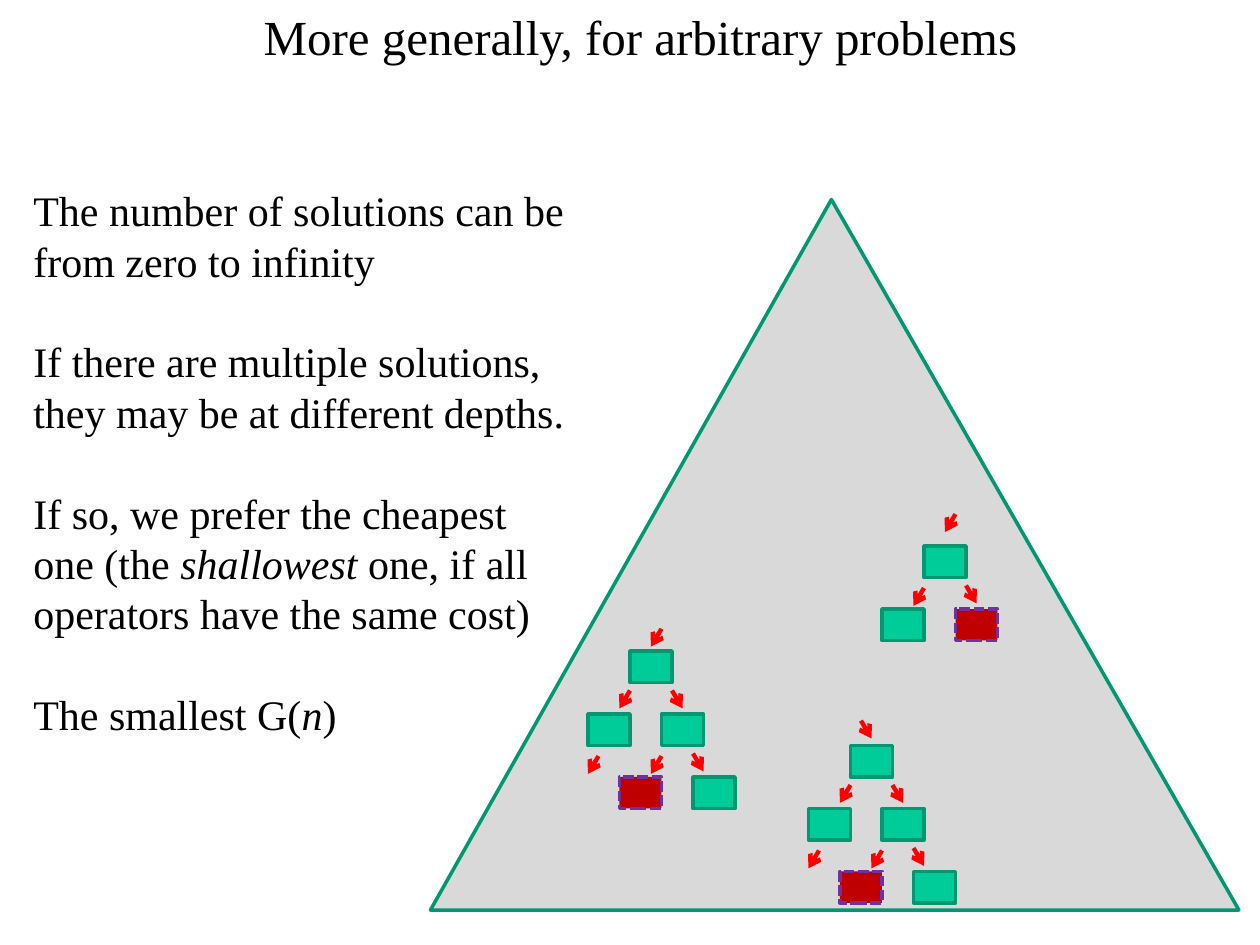
"""Build a slide on search trees whose solutions lie at different depths."""
from dataclasses import dataclass

from lxml import etree
from pptx import Presentation
from pptx.dml.color import RGBColor
from pptx.enum.dml import MSO_LINE
from pptx.enum.shapes import MSO_CONNECTOR, MSO_SHAPE
from pptx.enum.text import MSO_ANCHOR, MSO_AUTO_SIZE, PP_ALIGN
from pptx.oxml.ns import qn
from pptx.slide import Slide
from pptx.util import Pt

RECT, CONE = MSO_SHAPE.RECTANGLE, MSO_SHAPE.ISOSCELES_TRIANGLE
STRAIGHT, DASH = MSO_CONNECTOR.STRAIGHT, MSO_LINE.SQUARE_DOT
LEFT, CENTER = PP_ALIGN.LEFT, PP_ALIGN.CENTER
TOP, FIXED = MSO_ANCHOR.TOP, MSO_AUTO_SIZE.NONE

NOTES = [
    "The number of solutions can be from zero to infinity",
    "If there are multiple solutions, they may be at different depths.",
    "If so, we prefer the cheapest one (the *shallowest* one, if all operators have the same cost)",
    "The smallest G(*n*)",
]


@dataclass(frozen=True)
class Theme:
    """Colours, font and sizes of the slide."""
    font: str = "Times New Roman"
    head: int = 28
    body: int = 24
    ink: str = "000000"
    space: str = "D9D9D9"
    node: str = "00CC99"
    edge: str = "009771"
    goal: str = "C00000"
    rim: str = "7030A0"
    step: str = "FF0000"
    rule: float = 2
    stroke: float = 2.5


def put(frame, lines, *, font, size, color, align=LEFT, gap=0):
    """Fill a text frame, with italics between asterisks."""
    frame.word_wrap = True
    frame.auto_size = FIXED
    frame.vertical_anchor = TOP
    for i, line in enumerate(lines):
        para = frame.add_paragraph() if i else frame.paragraphs[0]
        para.alignment = align
        para.line_spacing = Pt(1.2 * size)
        para.space_after = Pt(gap)
        for j, part in enumerate(line.split("*")):
            run = para.add_run()
            run.text = part
            run.font.name = font
            run.font.size = Pt(size)
            run.font.italic = j % 2 == 1
            run.font.color.rgb = RGBColor.from_string(color)


@dataclass
class Board:
    """Draws each kind of element on the slide in one style."""
    slide: Slide
    theme: Theme

    def title(self, text, x, y, w, h):
        """Place and format the title."""
        t, head = self.theme, self.slide.shapes.title
        head.left, head.top, head.width, head.height = map(Pt, (x, y, w, h))
        put(head.text_frame, [text], font=t.font, size=t.head, color=t.ink, align=CENTER)

    def text(self, lines, x, y, w, h):
        """Add a text box with a blank line's gap between paragraphs."""
        t = self.theme
        box = self.slide.shapes.add_textbox(*map(Pt, (x, y, w, h)))
        put(box.text_frame, lines, font=t.font, size=t.body, color=t.ink, gap=1.2 * t.body)

    def shape(self, kind, x, y, w, h, fill, line):
        """Add a filled and outlined shape."""
        item = self.slide.shapes.add_shape(kind, *map(Pt, (x, y, w, h)))
        item.shadow.inherit = False
        item.fill.solid()
        item.fill.fore_color.rgb = RGBColor.from_string(fill)
        item.line.color.rgb = RGBColor.from_string(line)
        item.line.width = Pt(self.theme.rule)
        return item

    def node(self, x, y, goal=False):
        """Add a search node, dashed and red when it is a goal."""
        t = self.theme
        colors = (t.goal, t.rim) if goal else (t.node, t.edge)
        box = self.shape(RECT, x, y, 24, 18, *colors)
        if goal:
            box.line.dash_style = DASH

    def arrow(self, x, y, way):
        """Add a short arrow down to the left (-1) or right (1)."""
        ends = map(Pt, (x, y, x + 6 * way, y + 10.2))
        link = self.slide.shapes.add_connector(STRAIGHT, *ends)
        link.line.color.rgb = RGBColor.from_string(self.theme.step)
        link.line.width = Pt(self.theme.stroke)
        line = link.line._get_or_add_ln()
        etree.SubElement(line, qn("a:tailEnd"), type="arrow")
        etree.SubElement(link._element.spPr, qn("a:effectLst"))

    def tree(self, x, y, entry, deep):
        """Add a root with two children and, if deep, a lower level."""
        dx, dy, way = entry
        self.arrow(x + dx, y + dy, way)
        self.node(x, y)
        self.node(x - 24, y + 36)
        self.node(x + 18, y + 36, goal=not deep)
        self.arrow(x, y + (22.6 if deep else 24), -1)
        self.arrow(x + 24, y + 22.6, 1)
        if deep:
            self.node(x - 6, y + 72, goal=True)
            self.node(x + 36, y + 72)
            self.arrow(x - 18, y + 60, -1)
            self.arrow(x + 18, y + 60, -1)
            self.arrow(x + 36, y + 58.6, 1)


def main():
    """Build and save the slide."""
    deck = Presentation()
    deck.slide_width, deck.slide_height = Pt(720), Pt(540)
    theme = Theme()
    board = Board(deck.slides.add_slide(deck.slide_layouts[5]), theme)
    board.title("More generally, for arbitrary problems", 48, 0, 636, 41)
    cone = board.shape(CONE, 246, 114, 462, 406, theme.space, theme.edge)
    cone.adjustments[0] = 0.496
    board.text(NOTES, 12, 102, 324, 385)
    board.tree(360, 372, (18, -12.7, -1), deep=True)
    board.tree(528, 312, (18, -18.2, -1), deep=False)
    board.tree(486, 426, (6, -14.2, 1), deep=True)
    deck.save("out.pptx")


if __name__ == "__main__":
    main()
